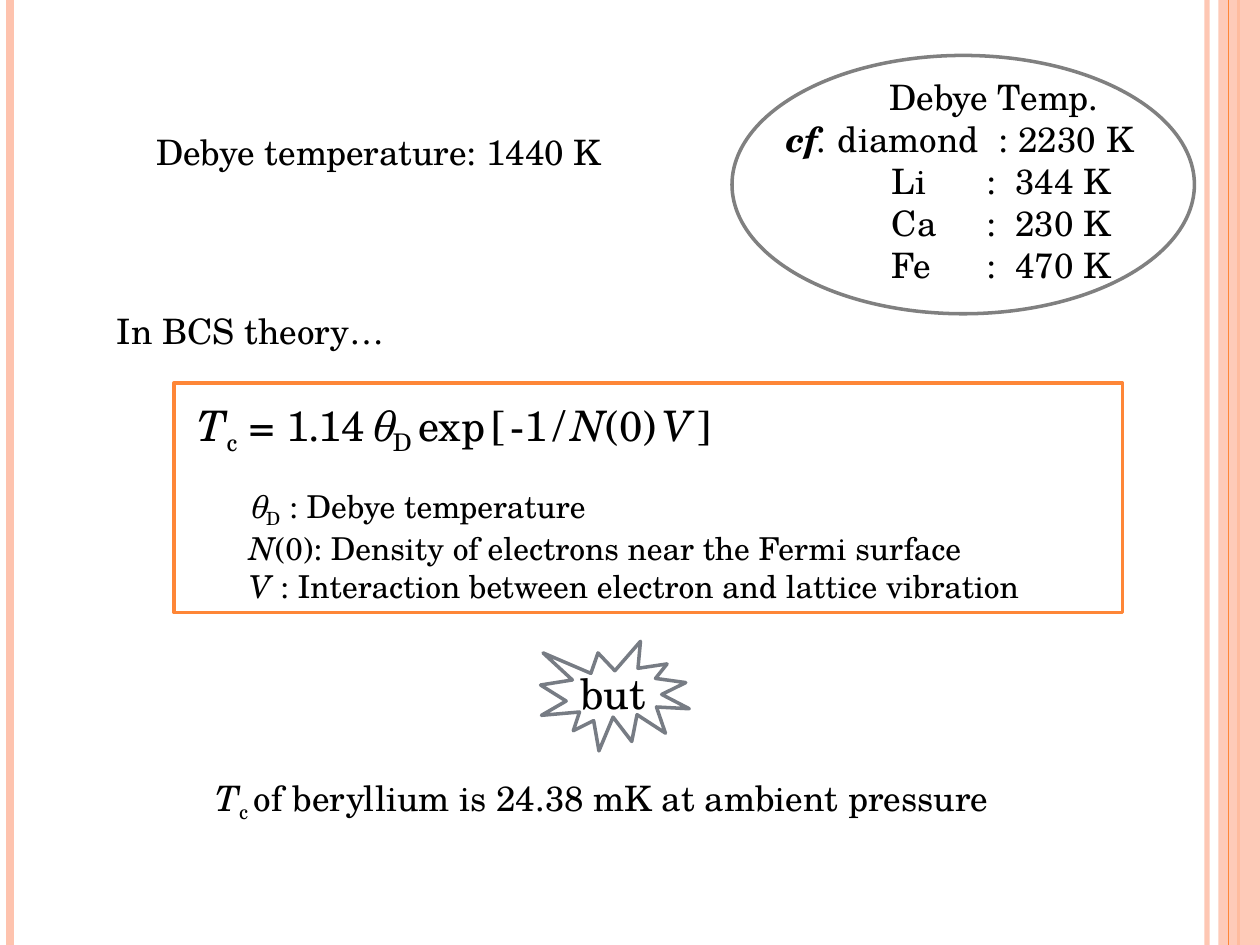
from typing import NamedTuple, Optional

from lxml import etree
from pptx import Presentation
from pptx.dml.color import RGBColor
from pptx.enum import shapes, text
from pptx.oxml.ns import qn
from pptx.util import Inches, Pt

FONT = "TeX Gyre Schola"
BLACK = RGBColor(0x00, 0x00, 0x00)
WHITE = RGBColor(0xFF, 0xFF, 0xFF)
PEACH = RGBColor(0xFE, 0xC3, 0xAE)
ORANGE = RGBColor(0xFE, 0x86, 0x37)
SLATE = RGBColor(0x77, 0x7C, 0x84)
GRAY = RGBColor(0x80, 0x80, 0x80)


class Box(NamedTuple):
    left: float
    top: float
    width: float
    height: float


class Stripe(NamedTuple):
    x: float
    color: RGBColor
    weight: float
    opacity: int = 100


class Piece(NamedTuple):
    text: str
    size: float = 20
    italic: bool = False
    bold: bool = False
    subscript: bool = False


class Line(NamedTuple):
    pieces: list[Piece]
    space_before: float = 0
    tab_stops: tuple[float, ...] = ()


class Label(NamedTuple):
    box: Box
    lines: list[Line]
    wrap: bool = False


def set_opacity(element, percent: int) -> None:
    color = next(element.iter(qn("a:srgbClr")))
    etree.SubElement(color, qn("a:alpha")).set("val", str(percent * 1000))


def draw_stripe(slide, stripe: Stripe) -> None:
    connector = slide.shapes.add_connector(
        shapes.MSO_CONNECTOR.STRAIGHT,
        Inches(stripe.x), Inches(0), Inches(stripe.x), Inches(7.5))
    connector.line.color.rgb = stripe.color
    connector.line.width = Pt(stripe.weight)
    properties = connector._element.spPr
    if stripe.opacity < 100:
        set_opacity(properties, stripe.opacity)
    etree.SubElement(properties, qn("a:effectLst"))


def draw_shape(slide, kind, box: Box, fill: Optional[RGBColor] = None,
               line: Optional[RGBColor] = None):
    shape = slide.shapes.add_shape(kind, *map(Inches, box))
    shape.shadow.inherit = False
    if fill is None:
        shape.fill.background()
    else:
        shape.fill.solid()
        shape.fill.fore_color.rgb = fill
    if line is None:
        shape.line.fill.background()
    else:
        shape.line.color.rgb = line
        shape.line.width = Pt(2)
    return shape


def write_lines(frame, lines: list[Line]) -> None:
    for index, line in enumerate(lines):
        paragraph = frame.add_paragraph() if index else frame.paragraphs[0]
        paragraph.alignment = text.PP_ALIGN.LEFT
        paragraph.space_before = Pt(line.space_before)
        if line.tab_stops:
            tabs = etree.SubElement(paragraph._p.get_or_add_pPr(), qn("a:tabLst"))
            for stop in line.tab_stops:
                tab = etree.SubElement(tabs, qn("a:tab"))
                tab.set("pos", str(Inches(stop)))
                tab.set("algn", "l")
        for piece in line.pieces:
            run = paragraph.add_run()
            run.text = piece.text
            run.font.name = FONT
            run.font.size = Pt(piece.size)
            run.font.color.rgb = BLACK
            run.font.italic = piece.italic
            run.font.bold = piece.bold
            if piece.subscript:
                run._r.get_or_add_rPr().set("baseline", "-25000")


def draw_label(slide, label: Label) -> None:
    frame = slide.shapes.add_textbox(*map(Inches, label.box)).text_frame
    frame.word_wrap = label.wrap
    frame.auto_size = text.MSO_AUTO_SIZE.SHAPE_TO_FIT_TEXT
    write_lines(frame, label.lines)


STRIPES = [
    Stripe(9.58, PEACH, 3, 93),
    Stripe(0.08, PEACH, 4.5),
    Stripe(9.83, ORANGE, 1.5),
]
INNER_STRIPE = Stripe(9.75, ORANGE, 0.75)

FORMULA = [
    Piece(" T", 24, italic=True), Piece("c", 24, subscript=True),
    Piece(" = ", 24, italic=True), Piece("1.14", 24), Piece(" ", 10.5),
    Piece("θ", 24, italic=True), Piece("D", 24, subscript=True),
    Piece(" ", 14), Piece("exp", 24), Piece(" ", 12), Piece("[", 24),
    Piece(" ", 11), Piece("-1", 24), Piece(" ", 12), Piece("/", 24),
    Piece(" ", 12), Piece("N", 24, italic=True), Piece("(0)", 24),
    Piece(" ", 11), Piece("V", 24, italic=True), Piece(" ", 11),
    Piece("]", 24),
]
THEORY = [
    Line(FORMULA),
    Line([Piece("\tθ", 18, italic=True), Piece("D", 18, subscript=True),
          Piece(" : Debye temperature", 18)], space_before=17),
    Line([Piece("\tN", 18, italic=True),
          Piece("(0): Density of electrons near the Fermi surface", 18)]),
    Line([Piece("\tV", 18, italic=True),
          Piece(" : Interaction between electron and lattice vibration", 18)]),
]

ELEMENTS = [("Li", "344 K"), ("Ca", "230 K"), ("Fe", "470 K")]
COMPARISON = [
    Line([Piece("\tDebye Temp.")], tab_stops=(1.28,)),
    Line([Piece("\tcf", italic=True, bold=True), Piece(". ", italic=True),
          Piece("diamond\t: 2230 K")], tab_stops=(0.46, 2.15)),
    *(Line([Piece(f"\t{name}\t:\t{value}")], tab_stops=(1.3, 2.05, 2.28))
      for name, value in ELEMENTS),
]

LABELS = [
    Label(Box(1.61, 6.11, 6.47, 0.44), [Line([
        Piece("T", italic=True), Piece("c ", subscript=True),
        Piece("of beryllium is 24.38 mK at ambient pressure")])]),
    Label(Box(1.14, 0.99, 3.78, 0.44), [Line([Piece("Debye temperature: 1440 K")])]),
    Label(Box(0.83, 2.41, 2.84, 0.44), [Line([Piece("In BCS theory…")])]),
    Label(Box(4.51, 5.25, 0.73, 0.5), [Line([Piece("but", 24)])]),
    Label(Box(5.68, 0.55, 4.15, 1.78), COMPARISON, wrap=True),
]


def main() -> None:
    presentation = Presentation()
    presentation.slide_width = Inches(10)
    presentation.slide_height = Inches(7.5)
    slide = presentation.slides.add_slide(presentation.slide_layouts[6])
    kinds = shapes.MSO_SHAPE

    # Side decoration
    for stripe in STRIPES:
        draw_stripe(slide, stripe)
    band = draw_shape(slide, kinds.RECTANGLE, Box(9.67, 0, 0.33, 7.5), PEACH)
    set_opacity(band._element.spPr, 87)
    draw_stripe(slide, INNER_STRIPE)

    # Formula with its legend
    formula = draw_shape(slide, kinds.RECTANGLE, Box(1.38, 3.04, 7.53, 1.82),
                         WHITE, ORANGE)
    frame = formula.text_frame
    frame.word_wrap = True
    frame.vertical_anchor = text.MSO_ANCHOR.TOP
    frame.margin_top = Inches(0.13)
    write_lines(frame, THEORY)

    # Burst, comparison ring and labels
    draw_shape(slide, kinds.EXPLOSION1, Box(4.29, 5.09, 1.18, 0.87), WHITE, SLATE)
    draw_shape(slide, kinds.OVAL, Box(5.81, 0.44, 3.67, 2.05), line=GRAY)
    for label in LABELS:
        draw_label(slide, label)

    presentation.save("out.pptx")


if __name__ == "__main__":
    main()
